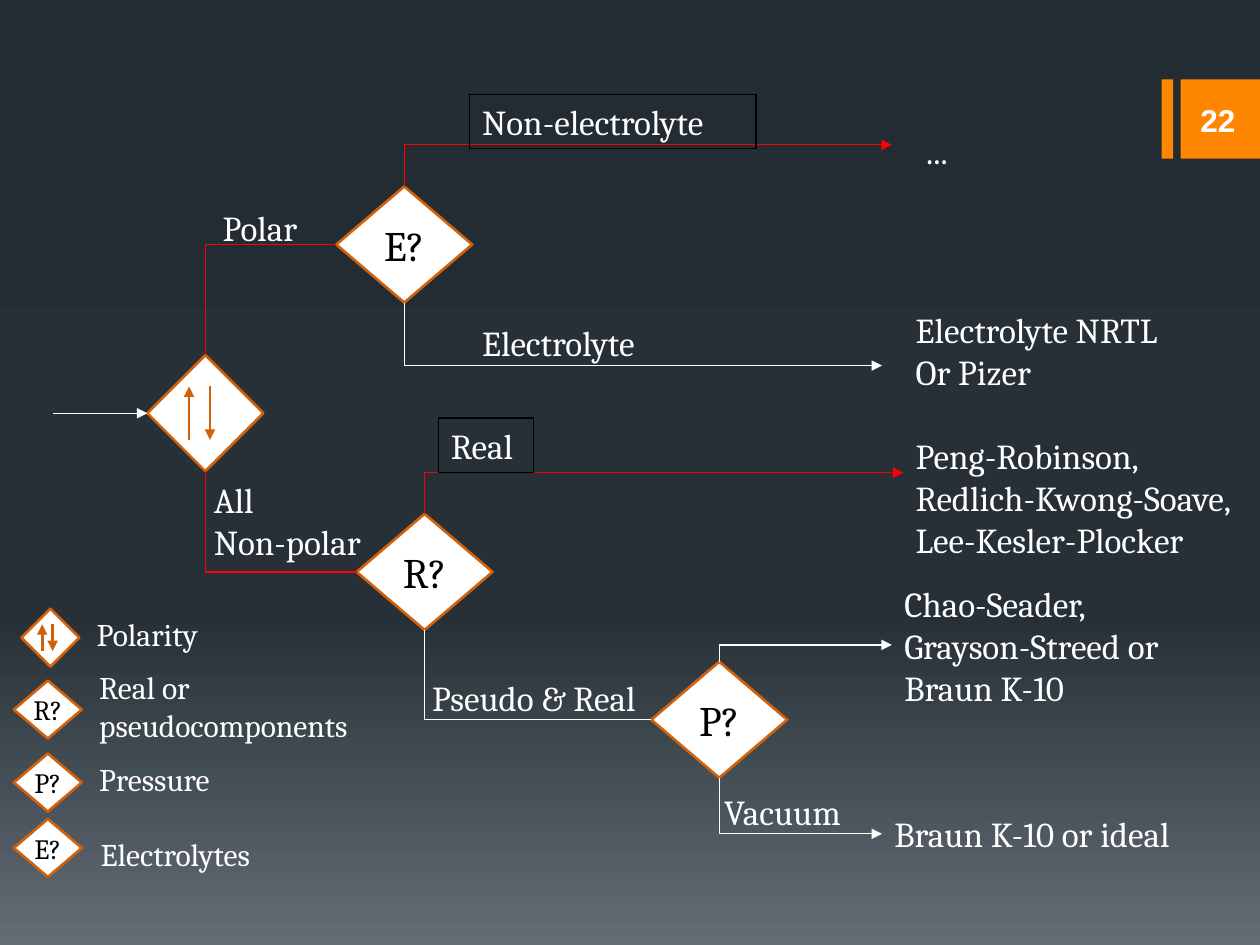
from copy import deepcopy
from dataclasses import dataclass

from lxml.etree import SubElement
from pptx import Presentation
from pptx.dml.color import RGBColor
from pptx.enum.shapes import MSO_CONNECTOR, MSO_SHAPE
from pptx.enum.text import MSO_ANCHOR, MSO_AUTO_SIZE, PP_ALIGN
from pptx.oxml.ns import qn
from pptx.util import Cm, Pt

STRAIGHT, ELBOW = MSO_CONNECTOR.STRAIGHT, MSO_CONNECTOR.ELBOW
DECISION, RECTANGLE = MSO_SHAPE.FLOWCHART_DECISION, MSO_SHAPE.RECTANGLE
LEFT, CENTER = PP_ALIGN.LEFT, PP_ALIGN.CENTER
MIDDLE = MSO_ANCHOR.MIDDLE
FIT_SHAPE = MSO_AUTO_SIZE.SHAPE_TO_FIT_TEXT
TOP_SIDE, LEFT_SIDE, BOTTOM_SIDE = 0, 1, 2


@dataclass(frozen=True)
class Theme:
    white: RGBColor = RGBColor.from_string("FFFFFF")
    black: RGBColor = RGBColor.from_string("000000")
    red: RGBColor = RGBColor.from_string("FF0000")
    outline: RGBColor = RGBColor.from_string("D2610C")
    accent: RGBColor = RGBColor.from_string("FF8600")
    background: tuple = ((0, "242C33"), (0.65, "273037"), (1, "636D76"))
    font: str = "Cambria"
    number_font: str = "Arial"
    decision_size: int = 24
    label_size: int = 20
    legend_size: int = 18
    legend_decision_size: int = 16
    thin: float = 0.75
    thick: float = 1.5


theme = Theme()


def write(frame, lines, size, color, align=LEFT, font=theme.font, bold=False):
    frame.word_wrap = False
    for index, line in enumerate(lines):
        paragraph = frame.add_paragraph() if index else frame.paragraphs[0]
        paragraph.alignment = align
        run = paragraph.add_run()
        run.text = line
        run.font.name = font
        run.font.size = Pt(size)
        run.font.bold = bold
        run.font.color.rgb = color


def style_line(connector, color, width, arrow):
    connector.line.color.rgb = color
    connector.line.width = Pt(width)
    properties = connector.element.spPr
    if arrow:
        SubElement(properties.find(qn("a:ln")), qn("a:tailEnd"), type="triangle")
    SubElement(properties, qn("a:effectLst"))


presentation = Presentation()
presentation.slide_width = Cm(25.4)
presentation.slide_height = Cm(19.05)
slide = presentation.slides.add_slide(presentation.slide_layouts[6])
shapes = slide.shapes

fill = slide.background.fill
fill.gradient()
fill.gradient_angle = 270
stop_list = next(slide.element.iter(qn("a:gsLst")))
stop_list.append(deepcopy(stop_list[-1]))
for stop, (position, color) in zip(fill.gradient_stops, theme.background):
    stop.position = position
    stop.color.rgb = RGBColor.from_string(color)

for left, width in ((23.42, 0.23), (23.8, 1.6)):
    bar = shapes.add_shape(RECTANGLE, Cm(left), Cm(1.6), Cm(width), Cm(1.6))
    bar.shadow.inherit = False
    bar.fill.solid()
    bar.fill.fore_color.rgb = theme.accent
    bar.line.fill.background()

decisions = {}
for name, left, top, width, height, text, size in (
    ("electrolyte", 6.78, 3.76, 2.74, 2.34, "E?", theme.decision_size),
    ("real", 7.19, 10.36, 2.74, 2.34, "R?", theme.decision_size),
    ("pressure", 13.13, 13.34, 2.74, 2.34, "P?", theme.decision_size),
    ("polarity", 2.97, 7.16, 2.34, 2.34, "", theme.decision_size),
    ("polarity key", 0.43, 12.27, 1.17, 1.17, "", theme.legend_decision_size),
    ("real key", 0.28, 13.72, 1.37, 1.17, "R?", theme.legend_decision_size),
    ("pressure key", 0.28, 15.19, 1.37, 1.17, "P?", theme.legend_decision_size),
    ("electrolyte key", 0.28, 16.51, 1.37, 1.17, "E?", theme.legend_decision_size),
):
    decision = shapes.add_shape(DECISION, Cm(left), Cm(top), Cm(width), Cm(height))
    decision.shadow.inherit = False
    decision.fill.solid()
    decision.fill.fore_color.rgb = theme.white
    decision.line.color.rgb = theme.outline
    decision.line.width = Pt(theme.thick)
    decision.text_frame.vertical_anchor = MIDDLE
    if text:
        write(decision.text_frame, [text], size, theme.black, CENTER)
    decisions[name] = decision

for name in ("polarity", "polarity key"):
    decision = decisions[name]
    for across, start, end in ((0.36, 0.73, 0.27), (0.54, 0.27, 0.73)):
        x = decision.left + int(across * decision.width)
        start_y, end_y = (decision.top + int(part * decision.height) for part in (start, end))
        arrow = shapes.add_connector(STRAIGHT, x, start_y, x, end_y)
        style_line(arrow, theme.outline, theme.thick, True)

entry = shapes.add_connector(STRAIGHT, Cm(1.07), Cm(8.33), Cm(2.97), Cm(8.33))
entry.end_connect(decisions["polarity"], LEFT_SIDE)
style_line(entry, theme.white, theme.thin, True)

for source, side, target, color in (
    ("polarity", TOP_SIDE, "electrolyte", theme.red),
    ("polarity", BOTTOM_SIDE, "real", theme.red),
    ("electrolyte", TOP_SIDE, (17.98, 2.92), theme.red),
    ("electrolyte", BOTTOM_SIDE, (17.78, 7.37), theme.white),
    ("real", TOP_SIDE, (18.21, 9.53), theme.red),
    ("real", BOTTOM_SIDE, "pressure", theme.white),
    ("pressure", TOP_SIDE, (17.98, 13), theme.white),
    ("pressure", BOTTOM_SIDE, (17.78, 16.81), theme.white),
):
    joins_decision = target in decisions
    end_x, end_y = (0, 0) if joins_decision else target
    branch = shapes.add_connector(ELBOW, 0, 0, Cm(end_x), Cm(end_y))
    branch.begin_connect(decisions[source], side)
    if joins_decision:
        branch.end_connect(decisions[target], LEFT_SIDE)
    run_length = branch.end_x - branch.begin_x
    rise = abs(branch.end_y - branch.begin_y)
    center_x = (branch.begin_x + branch.end_x) // 2
    center_y = (branch.begin_y + branch.end_y) // 2
    branch.left, branch.top = center_x - rise // 2, center_y - run_length // 2
    branch.width, branch.height = rise, run_length
    transform = branch.element.spPr.find(qn("a:xfrm"))
    transform.attrib.clear()
    transform.set("rot", "16200000")
    if side == BOTTOM_SIDE:
        transform.set("flipH", "1")
    branch.element.spPr.find(qn("a:prstGeom")).set("prst", "bentConnector2")
    style_line(branch, color, theme.thin, not joins_decision)

for left, top, width, height, lines, size, boxed in (
    (4.24, 4.04, 2.13, 1.09, ["Polar"], theme.label_size, False),
    (8.84, 8.43, 1.91, 1.09, ["Real"], theme.label_size, True),
    (9.47, 6.35, 4.22, 1.09, ["Electrolyte"], theme.label_size, False),
    (8.46, 13.51, 5.08, 1.09, ["Pseudo & Real"], theme.label_size, False),
    (14.35, 15.82, 2.97, 1.09, ["Vacuum"], theme.label_size, False),
    (9.47, 1.91, 5.77, 1.09, ["Non-electrolyte"], theme.label_size, True),
    (4.06, 9.53, 3.76, 1.96, ["All", "Non-polar"], theme.label_size, False),
    (17.78, 16.26, 6.78, 1.09, ["Braun K-10 or ideal"], theme.label_size, False),
    (17.98, 11.61, 6.93, 2.79, ["Chao-Seader,", "Grayson-Streed or", "Braun K-10"],
     theme.label_size, False),
    (18.21, 6.1, 6.3, 1.96, ["Electrolyte NRTL", "Or Pizer"], theme.label_size, False),
    (18.42, 2.49, 1.07, 1.12, ["..."], theme.label_size, False),
    (18.21, 8.64, 7.7, 2.79, ["Peng-Robinson,", "Redlich-Kwong-Soave,", "Lee-Kesler-Plocker"],
     theme.label_size, False),
    (1.7, 12.27, 2.79, 1.02, ["Polarity"], theme.legend_size, False),
    (1.75, 13.34, 5.99, 1.78, ["Real or", "pseudocomponents"], theme.legend_size, False),
    (1.75, 15.19, 3.1, 1.02, ["Pressure"], theme.legend_size, False),
    (1.78, 16.71, 4.17, 1.02, ["Electrolytes"], theme.legend_size, False),
):
    label = shapes.add_textbox(Cm(left), Cm(top), Cm(width), Cm(height))
    label.text_frame.auto_size = FIT_SHAPE
    write(label.text_frame, lines, size, theme.white)
    if boxed:
        label.line.color.rgb = theme.black
        label.line.width = Pt(theme.thin)

number = shapes.add_textbox(Cm(23.9), Cm(1.91), Cm(1.3), Cm(1.02))
write(number.text_frame, ["22"], theme.legend_size, theme.white, CENTER, theme.number_font, True)

presentation.save("out.pptx")
